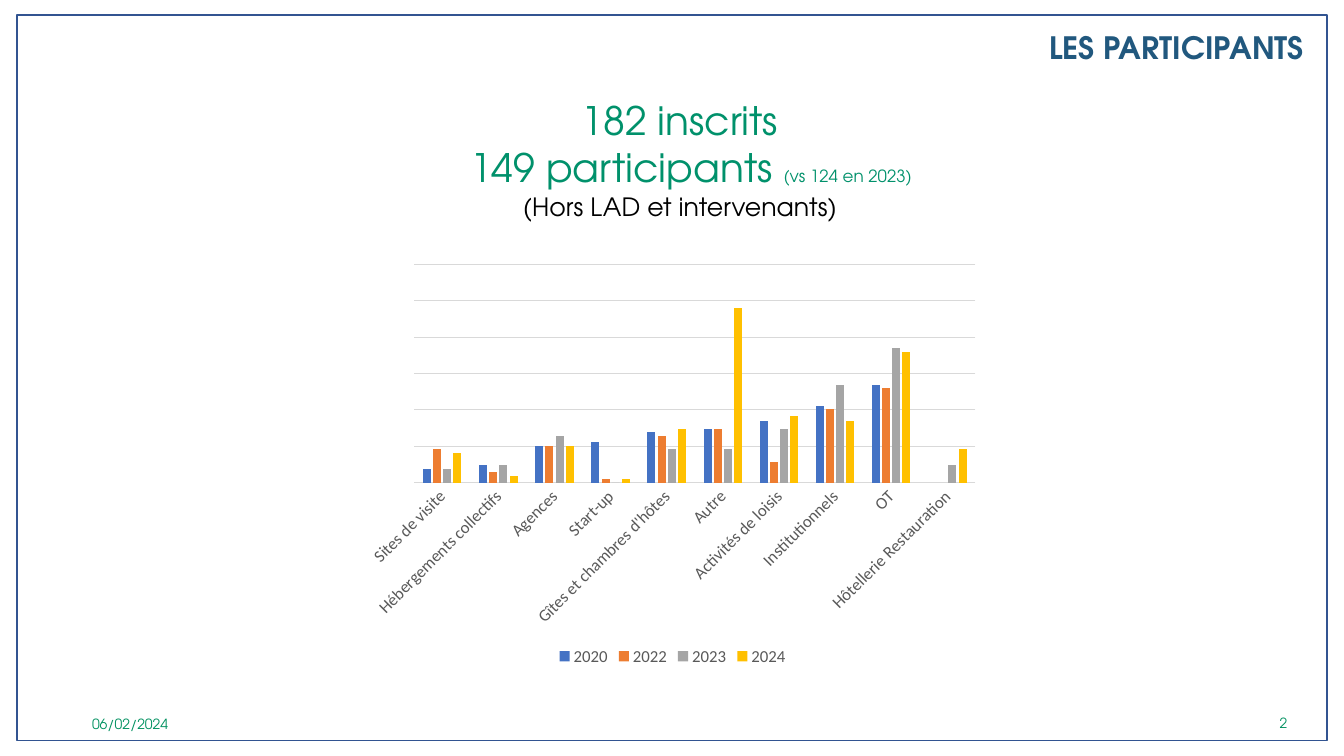
from pptx import Presentation
from pptx.chart.data import CategoryChartData
from pptx.dml.color import RGBColor
from pptx.enum.chart import XL_CHART_TYPE, XL_LEGEND_POSITION, XL_TICK_LABEL_POSITION, XL_TICK_MARK
from pptx.enum.shapes import MSO_SHAPE
from pptx.enum.text import MSO_ANCHOR, PP_ALIGN
from pptx.oxml.ns import qn
from pptx.util import Inches, Pt

RECTANGLE = MSO_SHAPE.RECTANGLE
CENTER, RIGHT = PP_ALIGN.CENTER, PP_ALIGN.RIGHT
TOP, MIDDLE = MSO_ANCHOR.TOP, MSO_ANCHOR.MIDDLE
CLUSTERED = XL_CHART_TYPE.COLUMN_CLUSTERED
LEGEND_BOTTOM = XL_LEGEND_POSITION.BOTTOM
NO_LABELS = XL_TICK_LABEL_POSITION.NONE
NO_TICKS = XL_TICK_MARK.NONE

WHITE = RGBColor(0xFF, 0xFF, 0xFF)
BLACK = RGBColor(0x00, 0x00, 0x00)
FRAME_BLUE = RGBColor(0x32, 0x54, 0x91)
TITLE_BLUE = RGBColor(0x21, 0x58, 0x7E)
FOOTER_GREEN = RGBColor(0x00, 0x91, 0x60)
COUNT_GREEN = RGBColor(0x00, 0x91, 0x6B)
LABEL_GREY = RGBColor(0x59, 0x59, 0x59)
GRID_GREY = RGBColor(0xD9, 0xD9, 0xD9)

TEXT_FONT = "TeX Gyre Adventor"
CHART_FONT = "Calibri"

CATEGORIES = [
    "Sites de visite", "Hébergements collectifs", "Agences", "Start-up",
    "Gîtes et chambres d'hôtes", "Autre", "Activités de loisis",
    "Institutionnels", "OT", "Hôtellerie Restauration",
]
YEARS = [
    ("2020", RGBColor(0x44, 0x72, 0xC4), [8, 10, 21, 23, 29, 31, 35, 44, 56, None]),
    ("2022", RGBColor(0xED, 0x7D, 0x31), [19, 6, 21, 2, 27, 31, 12, 42, 54, None]),
    ("2023", RGBColor(0xA5, 0xA5, 0xA5), [8, 10, 27, 0, 19, 19, 31, 56, 77, 10]),
    ("2024", RGBColor(0xFF, 0xC0, 0x00), [17, 4, 21, 2, 31, 100, 38, 35, 75, 19]),
]
AXIS_MAX = 125
GRID_STEPS = 6


def set_font(font, name, size, color, bold=False):
    font.name = name
    font.size = Pt(size)
    font.color.rgb = color
    font.bold = bold


def add_frame(slide):
    frame = slide.shapes.add_shape(
        RECTANGLE, Inches(0.17), Inches(0.15), Inches(12.99), Inches(7.2))
    frame.shadow.inherit = False
    frame.fill.solid()
    frame.fill.fore_color.rgb = WHITE
    frame.line.color.rgb = FRAME_BLUE
    frame.line.width = Pt(1)


def add_text(slide, position, lines, align=CENTER, anchor=TOP):
    """Add a text box; each line is a list of (text, size, color, bold) runs."""
    box = slide.shapes.add_textbox(*map(Inches, position))
    frame = box.text_frame
    frame.word_wrap = True
    frame.vertical_anchor = anchor
    for index, runs in enumerate(lines):
        paragraph = frame.add_paragraph() if index else frame.paragraphs[0]
        paragraph.alignment = align
        for text, size, color, bold in runs:
            run = paragraph.add_run()
            run.text = text
            set_font(run.font, TEXT_FONT, size, color, bold)
    return frame


def add_attendance(slide):
    counts = add_text(slide, (3.53, 0.91, 6.43, 1.35), [
        [("182 inscrits", 28, COUNT_GREEN, False)],
        [("149 participants ", 28, COUNT_GREEN, False),
         ("(vs 124 en 2023)", 12, COUNT_GREEN, False)],
        [("(Hors LAD et intervenants)", 18, BLACK, False)],
    ])
    participants = counts.paragraphs[1]
    participants._p.get_or_add_pPr().set("marL", str(Inches(0.22)))


def style_axes(chart):
    categories, values = chart.category_axis, chart.value_axis
    for axis in (categories, values):
        axis.major_tick_mark = NO_TICKS
        axis.minor_tick_mark = NO_TICKS
        set_font(axis.tick_labels.font, CHART_FONT, 12, LABEL_GREY)
    label_body = categories._element.find(qn("c:txPr")).find(qn("a:bodyPr"))
    label_body.set("rot", "-2700000")
    values.tick_label_position = NO_LABELS
    values.minimum_scale = 0
    values.maximum_scale = AXIS_MAX
    values.major_unit = AXIS_MAX / GRID_STEPS
    values.format.line.fill.background()
    for line in (categories.format.line, values.major_gridlines.format.line):
        line.color.rgb = GRID_GREY
        line.width = Pt(0.75)


def add_participant_chart(slide):
    data = CategoryChartData()
    data.categories = CATEGORIES
    for year, _, counts in YEARS:
        data.add_series(year, counts)
    chart = slide.shapes.add_chart(
        CLUSTERED, Inches(3.54), Inches(2.54), Inches(6.26), Inches(4.11), data).chart
    set_font(chart.font, CHART_FONT, 10, BLACK)
    chart.has_title = False
    chart.has_legend = True
    chart.legend.position = LEGEND_BOTTOM
    chart.legend.include_in_layout = False
    set_font(chart.legend.font, CHART_FONT, 12, LABEL_GREY)
    style_axes(chart)

    columns = chart.plots[0]
    columns.vary_by_categories = False
    columns.gap_width = 219
    columns.overlap = -27
    for series, (_, color, _) in zip(columns.series, YEARS):
        series.invert_if_negative = False
        series.format.fill.solid()
        series.format.fill.fore_color.rgb = color


def main():
    presentation = Presentation()
    presentation.slide_width = Inches(13.33)
    presentation.slide_height = Inches(7.5)
    slide = presentation.slides.add_slide(presentation.slide_layouts[6])

    add_frame(slide)
    title = add_text(slide, (7.5, 0.28, 5.53, 1),
                     [[("LES PARTICIPANTS", 22, TITLE_BLUE, True)]], align=RIGHT)
    title.paragraphs[0].line_spacing = 0.9
    for text, position in (("06/02/2024", (0.7, 7.06, 1.18, 0.24)),
                           ("2", (12.43, 7.05, 0.6, 0.24))):
        add_text(slide, position, [[(text, 10, FOOTER_GREEN, False)]], anchor=MIDDLE)
    add_attendance(slide)
    add_participant_chart(slide)

    presentation.save("out.pptx")


if __name__ == "__main__":
    main()
